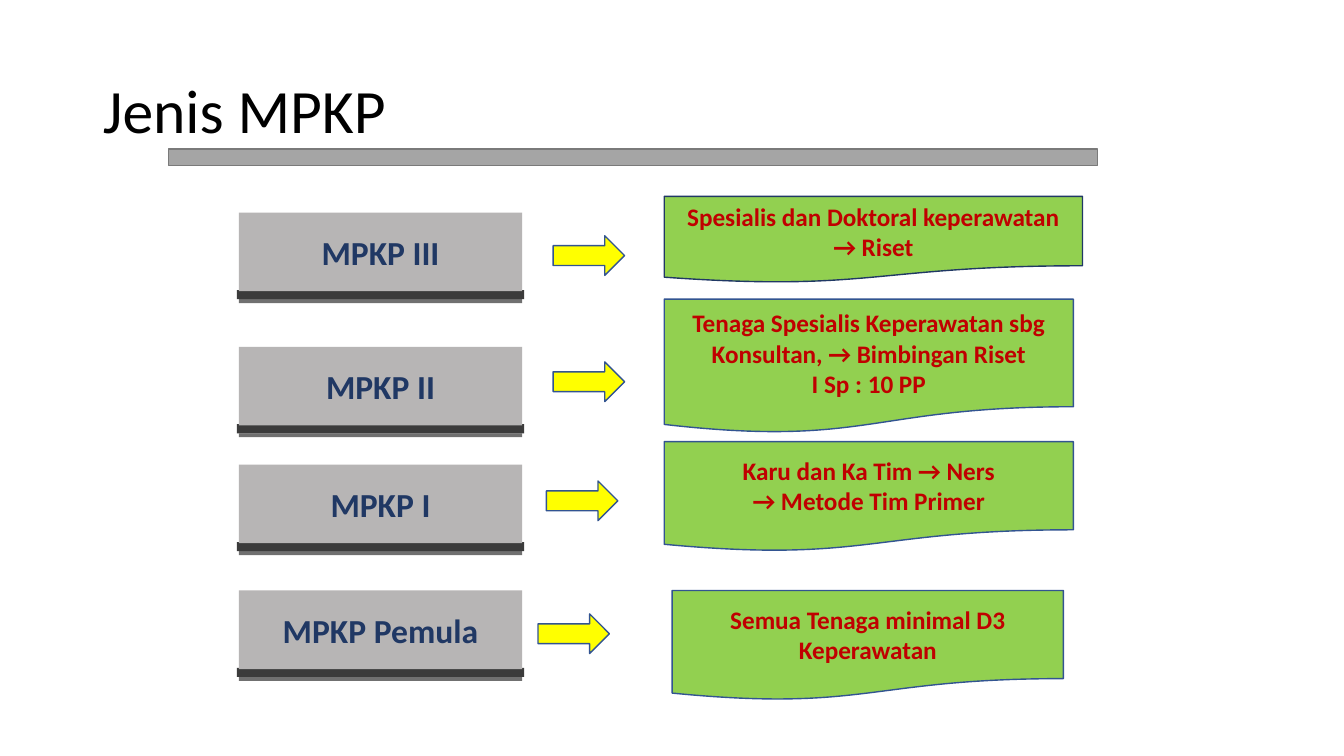
import pptx
import pptx.dml.color
import pptx.enum.shapes
import pptx.enum.text
import pptx.util

Cm = pptx.util.Cm
Pt = pptx.util.Pt
SHAPE = pptx.enum.shapes.MSO_SHAPE
ALIGN = pptx.enum.text.PP_ALIGN
MIDDLE = pptx.enum.text.MSO_ANCHOR.MIDDLE

COLOURS = {
    "title": "000000",
    "face": "B7B5B5",
    "edge": "3B3B3B",
    "base": "707070",
    "navy": "203864",
    "outline": "325491",
    "arrow": "FFFF00",
    "note": "92D050",
    "note_text": "C00000",
    "rule": "A5A5A5",
    "rule_line": "7A7A7A",
}


class ModelSlide:
    """Draws the parts of the slide in one shared style."""

    font_name = "Calibri"

    def __init__(self, slide):
        self.slide = slide

    def colour(self, key):
        return pptx.dml.color.RGBColor.from_string(COLOURS[key])

    def set_text(self, frame, lines, size, key, bold=True, align=ALIGN.CENTER):
        frame.word_wrap = True
        frame.vertical_anchor = MIDDLE
        frame.text = "\n".join(lines)
        for paragraph in frame.paragraphs:
            paragraph.alignment = align
            paragraph.font.name = self.font_name
            paragraph.font.size = Pt(size)
            paragraph.font.bold = bold
            paragraph.font.color.rgb = self.colour(key)

    def title(self, text):
        heading = self.slide.shapes.title
        heading.left, heading.top = Cm(2.34), Cm(1.02)
        heading.width, heading.height = Cm(29.21), Cm(3.68)
        self.set_text(heading.text_frame, [text], 44, "title", False, ALIGN.LEFT)
        heading.text_frame.paragraphs[0].line_spacing = 0.9

    def block(self, kind, left, top, width, height, fill, line=None):
        shape = self.slide.shapes.add_shape(kind, Cm(left), Cm(top), Cm(width), Cm(height))
        shape.shadow.inherit = False
        shape.fill.solid()
        shape.fill.fore_color.rgb = self.colour(fill)
        if line:
            shape.line.color.rgb = self.colour(line)
            shape.line.width = Pt(1)
        else:
            shape.line.fill.background()
        return shape

    def level(self, name, top):
        self.block(SHAPE.RECTANGLE, 6.02, top + 2.18, 7.14, 0.1, "base")
        self.block(SHAPE.RECTANGLE, 5.97, top + 1.95, 7.24, 0.23, "edge")
        face = self.block(SHAPE.RECTANGLE, 6.02, top, 7.14, 1.98, "face")
        self.set_text(face.text_frame, [name], 24, "navy")

    def arrow(self, left, top):
        self.block(SHAPE.RIGHT_ARROW, left, top, 1.8, 1, "arrow", "outline")

    def note(self, lines, left, top, width, height, line="outline"):
        note = self.block(SHAPE.FLOWCHART_DOCUMENT, left, top, width, height, "note", line)
        self.set_text(note.text_frame, lines, 18, "note_text")

    def rule(self):
        self.block(SHAPE.RECTANGLE, 4.24, 3.76, 23.42, 0.41, "rule", "rule_line")


def main():
    deck = pptx.Presentation()
    deck.slide_width, deck.slide_height = Cm(33.87), Cm(19.05)
    page = ModelSlide(deck.slides.add_slide(deck.slide_layouts[5]))
    page.title("Jenis MPKP")

    models = [
        ("MPKP III", 5.36, (13.94, 5.94),
         ["Spesialis dan Doktoral keperawatan → Riset"],
         (16.74, 4.95, 10.54, 2.18, "navy")),
        ("MPKP II", 8.74, (13.94, 9.12),
         ["Tenaga Spesialis Keperawatan sbg Konsultan, → Bimbingan Riset", "I Sp : 10 PP"],
         (16.74, 7.54, 10.31, 3.38)),
        ("MPKP I", 11.71, (13.77, 12.12),
         ["Karu dan Ka Tim → Ners", "→ Metode Tim Primer"],
         (16.74, 11.13, 10.31, 2.77)),
        ("MPKP Pemula", 14.88, (13.56, 15.47),
         ["Semua Tenaga minimal D3 Keperawatan"],
         (16.94, 14.88, 9.86, 2.77)),
    ]
    for name, top, arrow_place, staffing, note_place in models:
        page.level(name, top)
        page.arrow(*arrow_place)
        page.note(staffing, *note_place)
    page.rule()
    deck.save("out.pptx")


if __name__ == "__main__":
    main()
